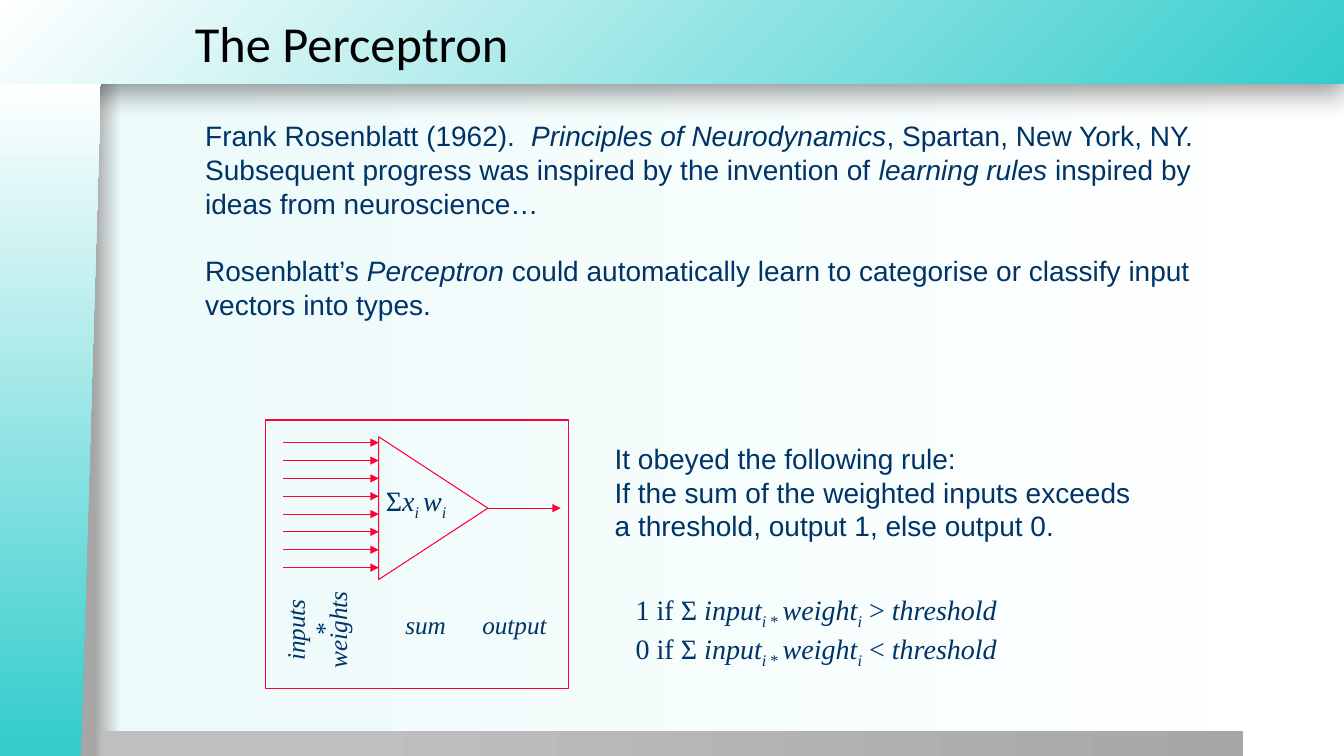
import pptx
import pptx.util
import pptx.dml.color
import pptx.enum.shapes
import pptx.enum.text
import pptx.oxml
import pptx.oxml.ns

Pt = pptx.util.Pt
RGBColor = pptx.dml.color.RGBColor
SHAPE = pptx.enum.shapes.MSO_SHAPE
qn = pptx.oxml.ns.qn

TEAL = RGBColor(0x34, 0xCC, 0xCC)
WHITE = RGBColor(0xFF, 0xFF, 0xFF)
MINT = RGBColor(0xED, 0xFB, 0xFB)
EDGE_GREY = RGBColor(0xA6, 0xA6, 0xA6)
BAR_LIGHT = RGBColor(0xBF, 0xBF, 0xBF)
BAR_DARK = RGBColor(0xA7, 0xA7, 0xA7)
BLACK = RGBColor(0, 0, 0)
NAVY = RGBColor(0x00, 0x33, 0x66)
RED = RGBColor(0xFF, 0x00, 0x33)

# Span styles: "i" is italic, "_" is subscript
INTRO = [
    [("Frank Rosenblatt (1962).  ", ""), ("Principles of Neurodynamics", "i"),
     (", Spartan, New York, NY.", "")],
    [("Subsequent progress was inspired by the invention of ", ""),
     ("learning rules", "i"), (" inspired by ideas from neuroscience…", "")],
    [("Rosenblatt’s ", ""), ("Perceptron", "i"),
     (" could automatically learn to categorise or classify input vectors into types.", "")],
]
RULE = [
    [("It obeyed the following rule:", "")],
    [("If the sum of the weighted inputs exceeds a threshold, output 1, else output 0.", "")],
]
FORMULAS = [
    [(f"{result} if Σ ", ""), ("input", "i"), ("i", "i_"), (" * ", "_"),
     ("weight", "i"), ("i", "i_"), (f" {sign} ", ""), ("threshold", "i")]
    for result, sign in ((1, ">"), (0, "<"))
]
WEIGHTED_SUM = [[("Σ", ""), ("x", "i"), ("i ", "i_"), ("w", "i"), ("i", "i_")]]


def parse(xml):
    namespace = "http://schemas.openxmlformats.org/drawingml/2006/main"
    return pptx.oxml.parse_xml(xml.replace(" ", f' xmlns:a="{namespace}" ', 1))


def set_gradient(fill, owner, stops, direction='<a:lin ang="0" scaled="0"/>'):
    """Fill the owner element with (percent, colour) stops."""
    fill.gradient()
    gradient = next(owner.iter(qn("a:gradFill")))
    marks = "".join(f'<a:gs pos="{percent * 1000}"><a:srgbClr val="{colour}"/></a:gs>'
                    for percent, colour in stops)
    gradient.getparent().replace(gradient, parse(
        f'<a:gradFill rotWithShape="1"><a:gsLst>{marks}</a:gsLst>{direction}</a:gradFill>'))


def add_panel(page, kind, box, stops, **direction):
    panel = page.shapes.add_shape(kind, *map(Pt, box))
    panel.shadow.inherit = False
    panel.line.fill.background()
    set_gradient(panel.fill, panel._element, stops, **direction)
    return panel


def add_text(shapes, box, paragraphs, font_name, size=20, align=None):
    text_box = shapes.add_textbox(*map(Pt, box))
    frame = text_box.text_frame
    frame.word_wrap = True
    for index, spans in enumerate(paragraphs):
        para = frame.paragraphs[0] if index == 0 else frame.add_paragraph()
        para.alignment = align
        para.font.name = font_name
        para.font.size = Pt(size)
        para.font.color.rgb = NAVY
        para.font.italic = True if all("i" in style for _, style in spans) else None
        for text, style in spans:
            span = para.add_run()
            span.text = text
            if "i" in style and not para.font.italic:
                span.font.italic = True
            if "_" in style:
                span.font._element.set("baseline", "-25000")
    return text_box


def add_outline(shapes, kind, box):
    outline = shapes.add_shape(kind, *map(Pt, box))
    outline.shadow.inherit = False
    outline.fill.background()
    outline.line.color.rgb = RED
    outline.line.width = Pt(0.75)
    return outline


def add_arrow(shapes, left, right, y):
    arrow = shapes.add_connector(pptx.enum.shapes.MSO_CONNECTOR.STRAIGHT,
                                 Pt(left), Pt(y), Pt(right), Pt(y))
    arrow.line.color.rgb = RED
    arrow.line.width = Pt(0.75)
    arrow.line._get_or_add_ln().append(parse('<a:tailEnd type="triangle"/>'))
    arrow._element.spPr.append(parse("<a:effectLst />"))


def draw_frame(page, width, height):
    """Background, header band, footer bar and slanted left band."""
    set_gradient(page.background.fill, page._element,
                 [(7, EDGE_GREY), (9, MINT), (100, WHITE)])
    header = add_panel(
        page, SHAPE.RECTANGLE, (0, 0, width, 60), [(0, TEAL), (100, WHITE)],
        direction='<a:path path="circle"><a:fillToRect l="100000" t="100000"/></a:path>')
    effects = header._element.spPr.find(qn("a:effectLst"))
    effects.append(parse(
        f'<a:outerShdw blurRad="{Pt(20)}" dist="{Pt(6)}" dir="5400000" algn="t" '
        'rotWithShape="0"><a:srgbClr val="000000"><a:alpha val="40000"/></a:srgbClr>'
        '</a:outerShdw>'))
    add_panel(page, SHAPE.RECTANGLE, (72, height - 18, 816, 18),
              [(20, BAR_LIGHT), (100, BAR_DARK)])
    length, thickness = height - 60, 72
    band = add_panel(page, SHAPE.FLOWCHART_MANUAL_INPUT,
                     ((thickness - length) / 2, 60 + (length - thickness) / 2,
                      length, thickness), [(1, TEAL), (100, WHITE)])
    band.rotation = 270
    band._element.spPr.find(qn("a:xfrm")).set("flipV", "1")


def write_title(page, box, text):
    title = page.shapes.title
    title.left, title.top, title.width, title.height = map(Pt, box)
    title._element.getparent().append(title._element)
    title.text_frame.text = text
    title.text_frame.vertical_anchor = pptx.enum.text.MSO_ANCHOR.MIDDLE
    para = title.text_frame.paragraphs[0]
    para.alignment = pptx.enum.text.PP_ALIGN.LEFT
    para.font.name = "Calibri"
    para.font.size = Pt(36)
    para.font.color.rgb = BLACK


def draw_perceptron(page, box):
    left, top, width, height = box
    shapes = page.shapes.add_group_shape().shapes
    add_outline(shapes, SHAPE.RECTANGLE, box)

    base, depth, axis = 102, 78, top + 63
    base_x = left + 80.5
    triangle = add_outline(shapes, SHAPE.ISOSCELES_TRIANGLE,
                           (base_x + (depth - base) / 2, axis - depth / 2, base, depth))
    triangle.rotation = 90
    for row in range(8):
        add_arrow(shapes, left + 12, base_x, top + 16.2 + 12.75 * row)
    add_arrow(shapes, base_x + depth, left + width - 5.5, axis)
    add_text(shapes, (left + 78.5, top + 42, 78, 36), WEIGHTED_SUM, "Times New Roman")

    label_width, label_height = 84, 28.8
    for text, center_x, center_y, angle in (
            ("inputs", 20.6, 150, 270), ("*", 40.8, 150, 270),
            ("weights", 50.8, 150, 270), ("sum", 114, 146.4, 0),
            ("output", 177.5, 146.4, 0)):
        label = add_text(shapes, (left + center_x - label_width / 2,
                                  top + center_y - label_height / 2,
                                  label_width, label_height),
                         [[(text, "i")]], "Times New Roman", 18,
                         pptx.enum.text.PP_ALIGN.CENTER)
        label.rotation = angle


def main():
    deck = pptx.Presentation()
    deck.slide_width, deck.slide_height = Pt(960), Pt(540)
    page = deck.slides.add_slide(deck.slide_layouts[5])
    draw_frame(page, 960, 540)
    write_title(page, (132, 0, 654, 60), "The Perceptron")
    intro = add_text(page.shapes, (139.5, 84, 720, 184), INTRO, "Arial")
    intro.text_frame.paragraphs[0].line_spacing = 0.9
    intro.text_frame.paragraphs[2].space_before = Pt(24)
    add_text(page.shapes, (432, 312, 390, 108), RULE, "Arial")
    add_text(page.shapes, (447, 420, 375, 66), FORMULAS, "Times New Roman")
    draw_perceptron(page, (190, 300, 216, 192))
    deck.save("out.pptx")


if __name__ == "__main__":
    main()
